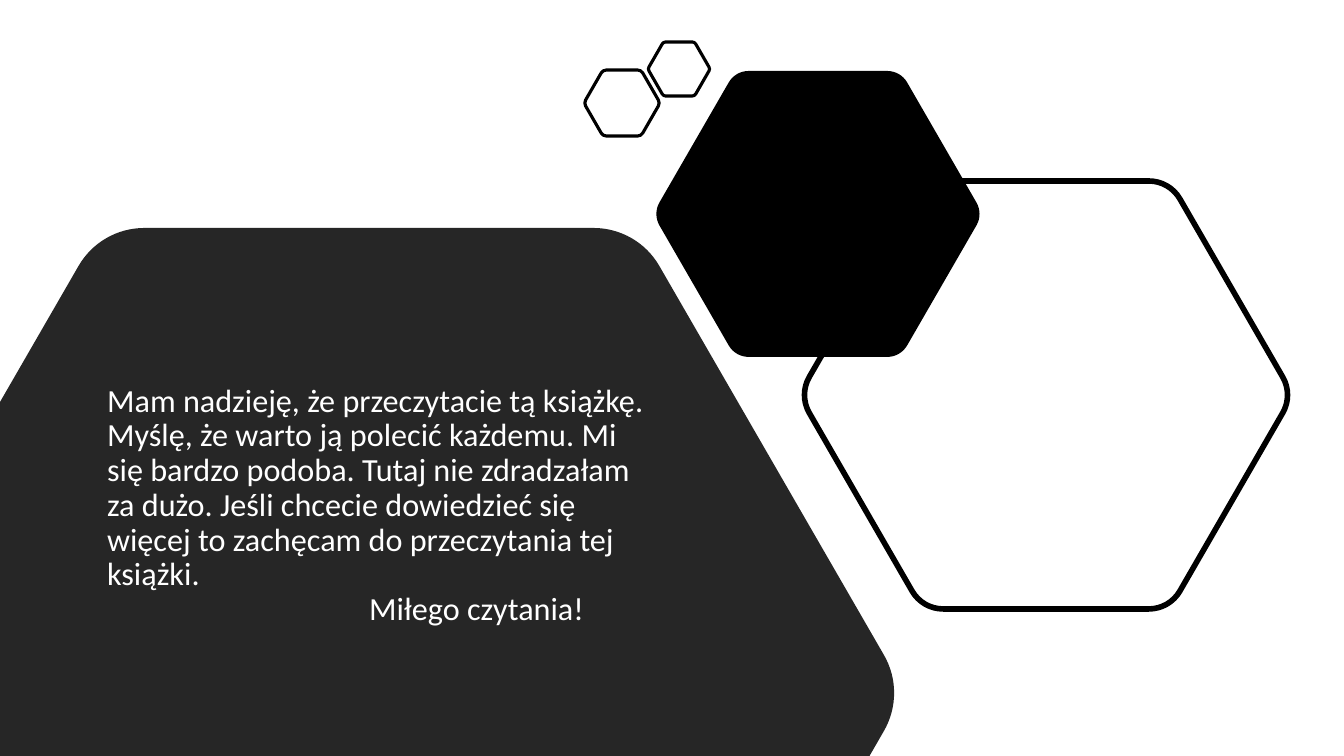
from math import cos, radians, sin, sqrt, tan

from lxml import etree
from pptx import Presentation
from pptx.dml.color import RGBColor
from pptx.enum.text import MSO_ANCHOR, MSO_AUTO_SIZE, PP_ALIGN
from pptx.oxml.ns import qn
from pptx.util import Pt

PX = 9071
SLIDE_W, SLIDE_H = 1344, 756
BLACK = RGBColor(0x00, 0x00, 0x00)
CHARCOAL = RGBColor(0x26, 0x26, 0x26)
WHITE = RGBColor(0xFF, 0xFF, 0xFF)
LEFT, MIDDLE, NO_AUTOFIT = PP_ALIGN.LEFT, MSO_ANCHOR.MIDDLE, MSO_AUTO_SIZE.NONE


def add_hexagon(shapes, cx, cy, apothem, radius, fill=None, line_width=None):
    """Draw a regular hexagon with rounded corners, cut at the slide's lower left."""
    half_width = apothem * 2 / sqrt(3)
    reach = (apothem - radius) * 2 / sqrt(3)
    handle = radius * 4 / 3 * tan(radians(15))
    points = []
    for angle in range(-120, 181, 60):
        x, y = cx + reach * cos(radians(angle)), cy + reach * sin(radians(angle))
        corner = []
        for turn, pull in ((-30, 0), (-30, handle), (30, -handle), (30, 0)):
            c, s = cos(radians(angle + turn)), sin(radians(angle + turn))
            corner.append((x + radius * c - pull * s, y + radius * s + pull * c))
        if all(px >= 0 and py <= SLIDE_H for px, py in corner):
            points += corner
    rounded_count = len(points) // 4
    if rounded_count < 6:
        points += [(cx + half_width - (SLIDE_H - cy) / sqrt(3), SLIDE_H), (0, SLIDE_H),
                   (0, cy - (half_width - cx) * sqrt(3))]

    outline = [(round(x * PX), round(y * PX)) for x, y in points]
    builder = shapes.build_freeform(*outline[0], scale=1.0)
    builder.add_line_segments(outline[1:], close=True)
    hexagon = builder.convert_to_shape()
    segments = list(hexagon._element.iter(qn("a:lnTo")))
    for first in range(0, rounded_count * 4, 4):
        curve = etree.Element(qn("a:cubicBezTo"))
        segments[first].addprevious(curve)
        for segment in segments[first:first + 3]:
            curve.append(segment[0])
            segment.getparent().remove(segment)

    hexagon.shadow.inherit = False
    if fill is None:
        hexagon.fill.background()
    else:
        hexagon.fill.solid()
        hexagon.fill.fore_color.rgb = fill
    if line_width is None:
        hexagon.line.fill.background()
    else:
        hexagon.line.color.rgb = BLACK
        hexagon.line.width = Pt(line_width)
    return hexagon


def write_text(frame, text, *, font, size, color, spacing, tab_stop):
    frame.word_wrap = True
    frame.auto_size = NO_AUTOFIT
    frame.vertical_anchor = MIDDLE
    paragraph = frame.paragraphs[0]
    paragraph.text = text
    tabs = etree.SubElement(paragraph._p.get_or_add_pPr(), qn("a:tabLst"))
    etree.SubElement(tabs, qn("a:tab"), pos=str(tab_stop), algn="l")
    paragraph.alignment = LEFT
    paragraph.line_spacing = spacing
    for target in (paragraph, *paragraph.runs):
        target.font.name = font
        target.font.size = Pt(size)
        target.font.color.rgb = color


prs = Presentation()
prs.slide_width, prs.slide_height = SLIDE_W * PX, SLIDE_H * PX
slide = prs.slides.add_slide(prs.slide_layouts[5])

add_hexagon(slide.shapes, 1046, 395, 214, 36, line_width=4)
add_hexagon(slide.shapes, 818, 214, 143, 23, fill=BLACK)
message_panel = add_hexagon(slide.shapes, 369, 693, 465, 76, fill=CHARCOAL)

message = slide.shapes.title
message_panel._element.addnext(message._element)
message.left, message.top = 97 * PX, 326 * PX
message.width, message.height = 564 * PX, 360 * PX
write_text(
    message.text_frame,
    "Mam nadzieję, że przeczytacie tą książkę. Myślę, że warto ją polecić każdemu. "
    "Mi się bardzo podoba. Tutaj nie zdradzałam za dużo. Jeśli chcecie dowiedzieć się "
    "więcej to zachęcam do przeczytania tej książki.\v\tMiłego czytania!",
    font="Calibri", size=23, color=WHITE, spacing=0.9, tab_stop=262 * PX,
)

small_pair = slide.shapes.add_group_shape()
for cx, cy, apothem, radius in ((622, 103, 33, 6), (679, 69, 27, 4)):
    add_hexagon(small_pair.shapes, cx, cy, apothem, radius, line_width=2.25)

prs.save("out.pptx")
